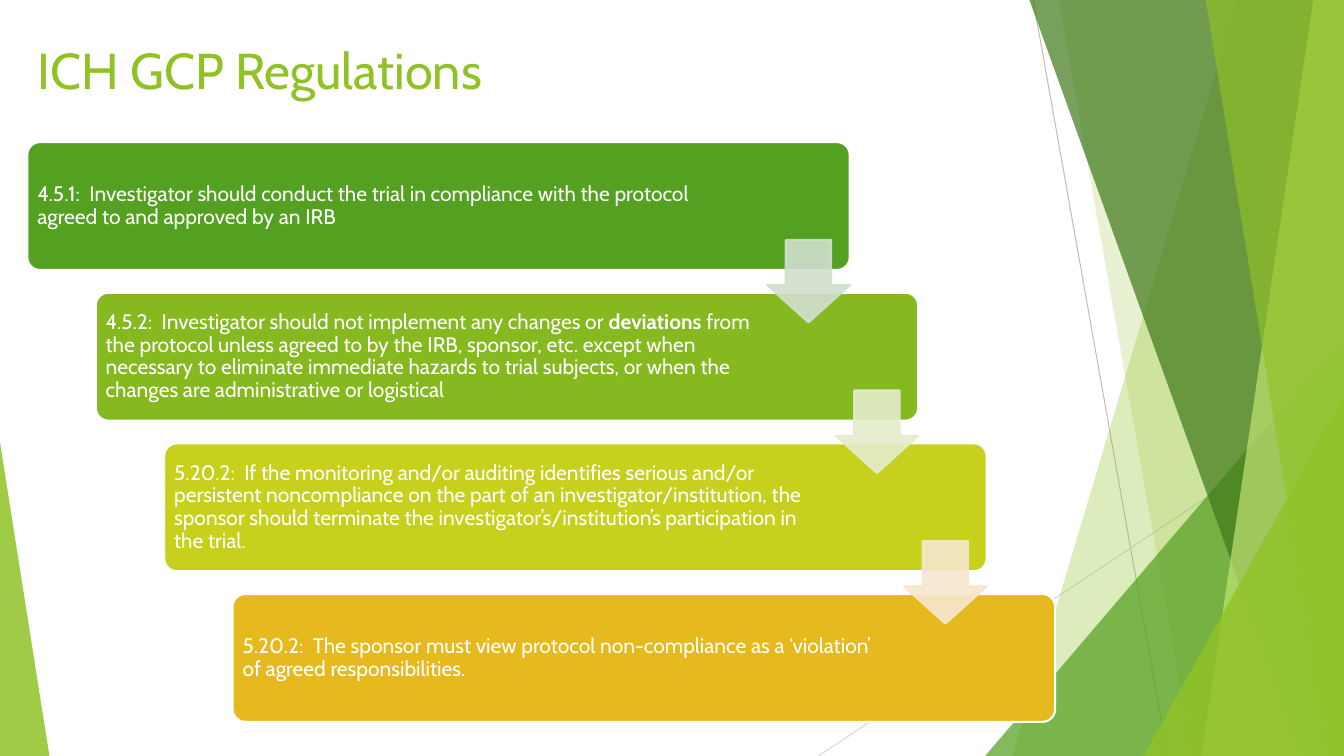
"""Build the ICH GCP Regulations slide."""
from dataclasses import dataclass

from lxml import etree
from pptx import Presentation
from pptx.dml.color import RGBColor
from pptx.enum.shapes import MSO_CONNECTOR, MSO_SHAPE
from pptx.enum.text import MSO_ANCHOR, MSO_AUTO_SIZE, PP_ALIGN
from pptx.oxml.ns import qn
from pptx.util import Pt

STRAIGHT = MSO_CONNECTOR.STRAIGHT
TRIANGLE = MSO_SHAPE.ISOSCELES_TRIANGLE
ROUNDED = MSO_SHAPE.ROUNDED_RECTANGLE
DOWN_ARROW = MSO_SHAPE.DOWN_ARROW
TOP, MIDDLE = MSO_ANCHOR.TOP, MSO_ANCHOR.MIDDLE
LEFT = PP_ALIGN.LEFT
NO_AUTOFIT = MSO_AUTO_SIZE.NONE


@dataclass(frozen=True)
class Theme:
    """Colours, font and type sizes of the slide."""

    font: str = "Cabin"
    title_size: float = 36
    body_size: float = 15
    white: str = "FFFFFF"
    lime: str = "90C226"
    green: str = "54A021"
    forest: str = "3F7819"
    pale: str = "C0E474"
    line_dark: str = "BFBFBF"
    line_light: str = "D9D9D9"
    cards: tuple = ("54A021", "86B820", "C7D01D", "E6B91E")
    arrows: tuple = ("D1DFCD", "E5ECCB", "F5E7CD")


def set_values(target, values):
    """Set each named attribute on the target."""
    for name, value in values.items():
        setattr(target, name, value)


class SlideBuilder:
    """Draws elements on one slide in one theme, with lengths in points."""

    def __init__(self, slide, theme):
        """Keep the slide and the theme."""
        self.slide = slide
        self.theme = theme

    def paint(self, fill, color, opacity, parent):
        """Apply a solid colour with an opacity in percent."""
        fill.solid()
        fill.fore_color.rgb = RGBColor.from_string(color)
        if opacity < 100:
            color_element = parent.find(qn("a:solidFill"))[0]
            etree.SubElement(color_element, qn("a:alpha")).set("val", str(opacity * 1000))

    def style(self, shape, color, opacity, outline):
        """Give a shape its fill and outline, and no shadow."""
        shape.shadow.inherit = False
        properties = shape._element.spPr
        self.paint(shape.fill, color, opacity, properties)
        if outline:
            shape.line.width = Pt(1.5)
            self.paint(shape.line.fill, outline, opacity, properties.find(qn("a:ln")))
        else:
            shape.line.fill.background()

    def shape(self, kind, box, color, adjustments, opacity=100, outline=None):
        """Add a preset shape."""
        shape = self.slide.shapes.add_shape(kind, *map(Pt, box))
        for index, value in enumerate(adjustments):
            shape.adjustments[index] = value
        self.style(shape, color, opacity, outline)

    def polygon(self, points, color, opacity):
        """Add a closed outline."""
        start, *rest = [(Pt(x), Pt(y)) for x, y in points]
        builder = self.slide.shapes.build_freeform(*start, scale=1.0)
        builder.add_line_segments(rest, close=True)
        self.style(builder.convert_to_shape(), color, opacity, None)

    def line(self, start, end, color):
        """Add a thin straight line."""
        connector = self.slide.shapes.add_connector(STRAIGHT, *map(Pt, start + end))
        connector.line.color.rgb = RGBColor.from_string(color)
        connector.line.width = Pt(0.75)
        etree.SubElement(connector._element.spPr, qn("a:effectLst"))

    def fill_frame(self, frame, runs, size, color, frame_format, paragraph_format):
        """Put one paragraph of (text, bold) runs in a text frame."""
        set_values(frame, {"word_wrap": True, "auto_size": NO_AUTOFIT, **frame_format})
        paragraph = frame.paragraphs[0]
        set_values(paragraph, {"alignment": LEFT, **paragraph_format})
        for text, bold in runs:
            run = paragraph.add_run()
            run.text = text
            set_values(run.font, {"name": self.theme.font, "size": Pt(size), "bold": bold})
            run.font.color.rgb = RGBColor.from_string(color)

    def title(self, text, box):
        """Place and fill the title placeholder."""
        title = self.slide.shapes.title
        set_values(title, dict(zip(("left", "top", "width", "height"), map(Pt, box))))
        self.fill_frame(title.text_frame, [(text, False)], self.theme.title_size,
                        self.theme.lime, {"vertical_anchor": TOP}, {})

    def text(self, runs, box):
        """Add a text box for a card."""
        margins = ("margin_left", "margin_top", "margin_right", "margin_bottom")
        frame_format = {"vertical_anchor": MIDDLE, **dict.fromkeys(margins, Pt(4.5))}
        frame = self.slide.shapes.add_textbox(*map(Pt, box)).text_frame
        self.fill_frame(frame, runs, self.theme.body_size, self.theme.white,
                        frame_format, {"line_spacing": 0.9})


WIDTH, HEIGHT = 960, 540
CARD_LEFT, CARD_TOP, CARD_WIDTH, CARD_HEIGHT = 19.5, 101.5, 587.5, 91.4
STEP_X, STEP_Y = 48.9, 107.6
ARROW_SIZE, ARROW_DROP = 59, 69.8
TEXT_INSET = 2.6

REGULATIONS = [
    (481.7, [("4.5.1:  Investigator should conduct the trial in compliance with the "
              "protocol agreed to and approved by an IRB", False)]),
    (474, [("4.5.2:  Investigator should not implement any changes or ", False),
           ("deviations", True),
           (" from the protocol unless agreed to by the IRB, sponsor, etc. except when "
            "necessary to eliminate immediate hazards to trial subjects, or when the "
            "changes are administrative or logistical", False)]),
    (474, [("5.20.2:  If the monitoring and/or auditing identifies serious and/or "
            "persistent noncompliance on the part of an investigator/institution, the "
            "sponsor should terminate the investigator’s/institution’s participation "
            "in the trial.", False)]),
    (474, [("5.20.2:  The sponsor must view protocol non-compliance as a ‘violation’ "
            "of agreed responsibilities.", False)]),
]


def draw_backdrop(builder):
    """Draw the translucent facets at the slide edges."""
    theme = builder.theme

    def facet(top_x, bottom_x, color, opacity):
        """Draw a facet that reaches the right edge."""
        builder.polygon([(top_x, -0.7), (WIDTH, -0.7), (WIDTH, HEIGHT), (bottom_x, HEIGHT)],
                        color, opacity)

    def corner(left, top, width, apex, color, opacity):
        """Draw a triangle that stands on the bottom edge."""
        builder.shape(TRIANGLE, (left, top, width, HEIGHT - top), color, [apex], opacity)

    builder.line((738, 0), (834, HEIGHT), theme.line_dark)
    builder.line((WIDTH, 290), (584.6, HEIGHT), theme.line_light)
    facet(884.2, 722.9, theme.lime, 30)
    facet(756, 851.8, theme.lime, 20)
    corner(703.7, 240, 256.3, 1, theme.green, 72)
    facet(735.1, 929.5, theme.forest, 70)
    facet(938.2, 858.2, theme.pale, 70)
    facet(861.1, 949, theme.lime, 65)
    corner(816.7, 283, 143.3, 1, theme.lime, 80)
    corner(0, 316, 35.3, 0, theme.lime, 85)


def draw_regulations(builder):
    """Draw the descending cards, then the arrows between them."""
    theme = builder.theme
    corners = [(CARD_LEFT + i * STEP_X, CARD_TOP + i * STEP_Y) for i in range(len(REGULATIONS))]
    for (left, top), color, (text_width, runs) in zip(corners, theme.cards, REGULATIONS):
        builder.shape(ROUNDED, (left, top, CARD_WIDTH, CARD_HEIGHT), color, [0.1],
                      outline=theme.white)
        builder.text(runs, (left + TEXT_INSET, top + TEXT_INSET, text_width,
                            CARD_HEIGHT - 2 * TEXT_INSET))
    for (left, top), color in zip(corners, theme.arrows):
        box = (left + CARD_WIDTH - ARROW_SIZE, top + ARROW_DROP, ARROW_SIZE, ARROW_SIZE)
        builder.shape(DOWN_ARROW, box, color, [0.55, 0.45], 90, color)


def main():
    """Build and save the presentation."""
    presentation = Presentation()
    set_values(presentation, {"slide_width": Pt(WIDTH), "slide_height": Pt(HEIGHT)})
    slide = presentation.slides.add_slide(presentation.slide_layouts[5])
    builder = SlideBuilder(slide, Theme())
    draw_backdrop(builder)
    builder.title("ICH GCP Regulations", (19.5, 24.5, 711.4, 113.8))
    draw_regulations(builder)
    presentation.save("out.pptx")


if __name__ == "__main__":
    main()
